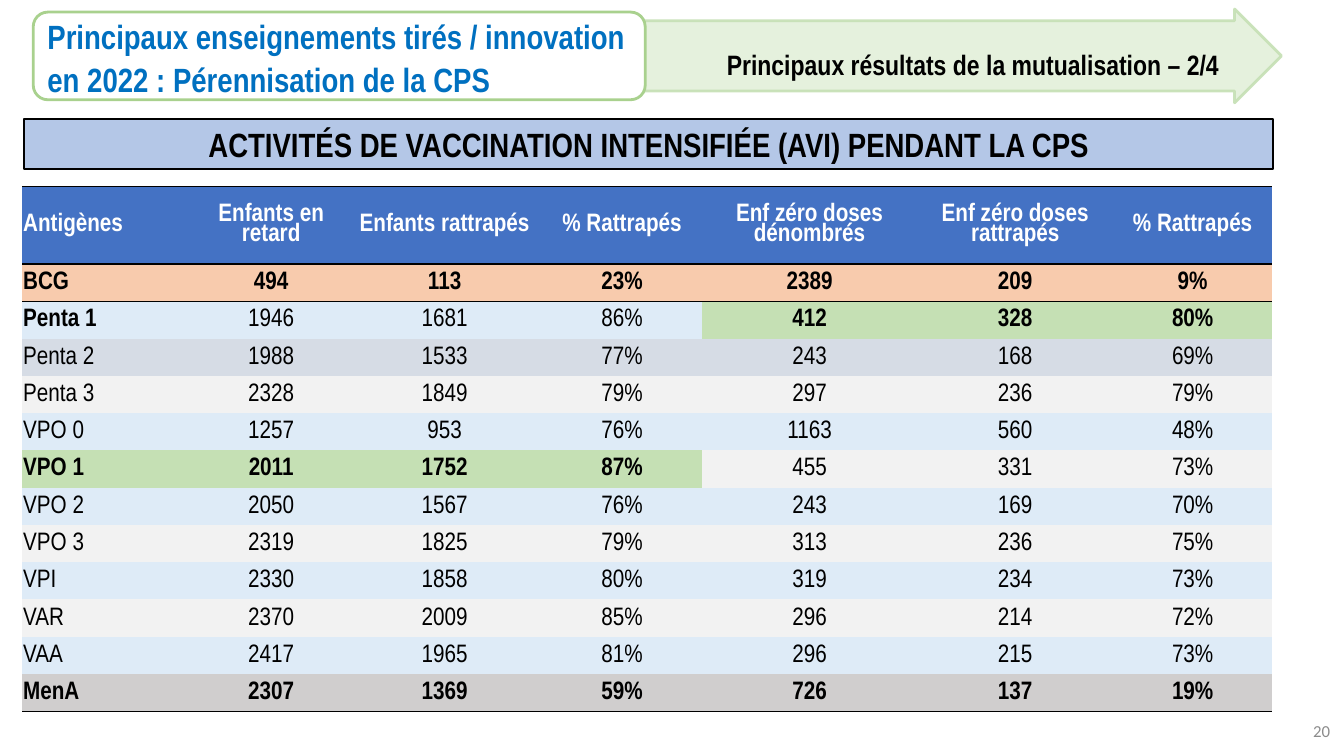
"""Build the slide on intensified vaccination results during the CPS campaign."""
from lxml import etree
from pptx import Presentation
from pptx.dml.color import RGBColor
from pptx.enum.shapes import MSO_SHAPE
from pptx.enum.text import MSO_ANCHOR, MSO_AUTO_SIZE, PP_ALIGN
from pptx.oxml.ns import qn
from pptx.util import Inches, Pt

LEFT, CENTER, RIGHT = PP_ALIGN.LEFT, PP_ALIGN.CENTER, PP_ALIGN.RIGHT
MIDDLE = MSO_ANCHOR.MIDDLE
NO_GRID_STYLE = "{2D5ABB26-0587-4C30-8999-92F81FD0307C}"
NARROW = "Arial Narrow"
BLACK, WHITE, BLUE = "000000", "FFFFFF", "4472C4"
ORANGE, GREEN, GREY = "F8CBAD", "C5E0B4", "D0CECE"
PALE, LIGHT, SLATE = "DEEBF7", "F2F2F2", "D6DCE5"
HIGHLIGHTS = (ORANGE, GREEN, GREY)


def rgb(value):
    return RGBColor.from_string(value)


def write(frame, text, size, color=BLACK, align=CENTER, bold=True, font=NARROW):
    frame.text = text
    frame.word_wrap = True
    paragraph = frame.paragraphs[0]
    paragraph.alignment = align
    paragraph.font.name = font
    paragraph.font.size = Pt(size)
    paragraph.font.bold = bold
    paragraph.font.color.rgb = rgb(color)
    return paragraph


prs = Presentation()
prs.slide_width, prs.slide_height = Inches(13.33), Inches(7.5)
slide = prs.slides.add_slide(prs.slide_layouts[5])
shapes = slide.shapes

panels = []
for preset, box, fill, line, weight in (
    (MSO_SHAPE.RIGHT_ARROW, (6.25, 0.09, 6.46, 0.93), "E2F0D9", GREEN, 2),
    (MSO_SHAPE.ROUNDED_RECTANGLE, (0.33, 0.12, 6.07, 0.87), WHITE, "A9D18E", 2),
    (MSO_SHAPE.RECTANGLE, (0.24, 1.18, 12.39, 0.5), "B4C7E7", BLACK, 1.5),
):
    panel = shapes.add_shape(preset, *map(Inches, box))
    panel.shadow.inherit = False
    panel.fill.solid()
    panel.fill.fore_color.rgb = rgb(fill)
    panel.line.color.rgb = rgb(line)
    panel.line.width = Pt(weight)
    panels.append(panel)
arrow, title_frame, banner = panels

arrow.adjustments[0] = 0.75
for color in arrow._element.spPr.iter(qn("a:srgbClr")):
    etree.SubElement(color, qn("a:alpha"), val="89000")

title = shapes.title
title.left, title.top = Inches(0.37), title_frame.top
title.width, title.height = Inches(6), title_frame.height
title.text_frame.auto_size = MSO_AUTO_SIZE.NONE
title.text_frame.vertical_anchor = MIDDLE
heading = write(
    title.text_frame,
    "Principaux enseignements tirés / innovation en 2022 : Pérennisation de la CPS",
    24, "0070C0", LEFT)
heading.line_spacing = 1.07
title_frame._element.addnext(title._element)

write(banner.text_frame, "ACTIVITÉS DE VACCINATION INTENSIFIÉE (AVI) PENDANT LA CPS", 24)

subtitle = shapes.add_textbox(*map(Inches, (6.59, 0.42, 6.12, 0.44)))
write(subtitle.text_frame, "Principaux résultats de la mutualisation – 2/4", 20)

page_number = shapes.add_textbox(*map(Inches, (12.71, 7.04, 0.58, 0.43)))
page_number.text_frame.vertical_anchor = MIDDLE
write(page_number.text_frame, "20", 12, "8C8C8C", RIGHT, False, "Calibri")

headers = ("Antigènes", "Enfants en retard", "Enfants rattrapés", "% Rattrapés",
           "Enf zéro doses dénombrés", "Enf zéro doses rattrapés", "% Rattrapés")
antigens = (
    ("BCG", 494, 113, 2389, 209, ORANGE, ORANGE),
    ("Penta 1", 1946, 1681, 412, 328, PALE, GREEN),
    ("Penta 2", 1988, 1533, 243, 168, SLATE, SLATE),
    ("Penta 3", 2328, 1849, 297, 236, LIGHT, LIGHT),
    ("VPO 0", 1257, 953, 1163, 560, PALE, PALE),
    ("VPO 1", 2011, 1752, 455, 331, GREEN, LIGHT),
    ("VPO 2", 2050, 1567, 243, 169, PALE, PALE),
    ("VPO 3", 2319, 1825, 313, 236, LIGHT, LIGHT),
    ("VPI", 2330, 1858, 319, 234, PALE, PALE),
    ("VAR", 2370, 2009, 296, 214, LIGHT, LIGHT),
    ("VAA", 2417, 1965, 296, 215, PALE, PALE),
    ("MenA", 2307, 1369, 726, 137, GREY, GREY),
)
rows = [(headers, [BLUE] * 7)]
for name, late, late_caught, zero, zero_caught, late_fill, zero_fill in antigens:
    texts = (name, late, late_caught, f"{late_caught / late:.0%}",
             zero, zero_caught, f"{zero_caught / zero:.0%}")
    rows.append((texts, [late_fill] * 4 + [zero_fill] * 3))

results = shapes.add_table(
    len(rows), len(headers), *map(Inches, (0.22, 1.85, 12.4, 5.19))).table
results._tbl.tblPr.find(qn("a:tableStyleId")).text = NO_GRID_STYLE
for column, width in zip(results.columns, (1.72, 1.5, 1.94, 1.58, 2.14, 1.94, 1.58)):
    column.width = Inches(width)
for r, (texts, fills) in enumerate(rows):
    is_header = r == 0
    results.rows[r].height = Inches(0.77 if is_header else 0.37)
    borders = {0: ("a:lnT", "a:lnB"), 1: ("a:lnT",), len(antigens): ("a:lnB",)}.get(r, ())
    for c, (text, fill) in enumerate(zip(texts, fills)):
        cell = results.cell(r, c)
        cell.margin_left = cell.margin_right = cell.margin_top = Inches(0.01)
        cell.margin_bottom = 0
        cell.vertical_anchor = MIDDLE
        cell.fill.solid()
        cell.fill.fore_color.rgb = rgb(fill)
        bold = is_header or fill in HIGHLIGHTS or text == "Penta 1"
        paragraph = write(cell.text_frame, str(text), 18, WHITE if is_header else BLACK,
                          LEFT if c == 0 else CENTER, bold)
        if is_header:
            paragraph.line_spacing = 0.83
        for position, side in enumerate(borders):
            border = etree.Element(qn(side), w=str(Pt(1)))
            ink = etree.SubElement(border, qn("a:solidFill"))
            etree.SubElement(ink, qn("a:srgbClr"), val=BLACK)
            cell._tc.get_or_add_tcPr().insert(position, border)

prs.save("out.pptx")
